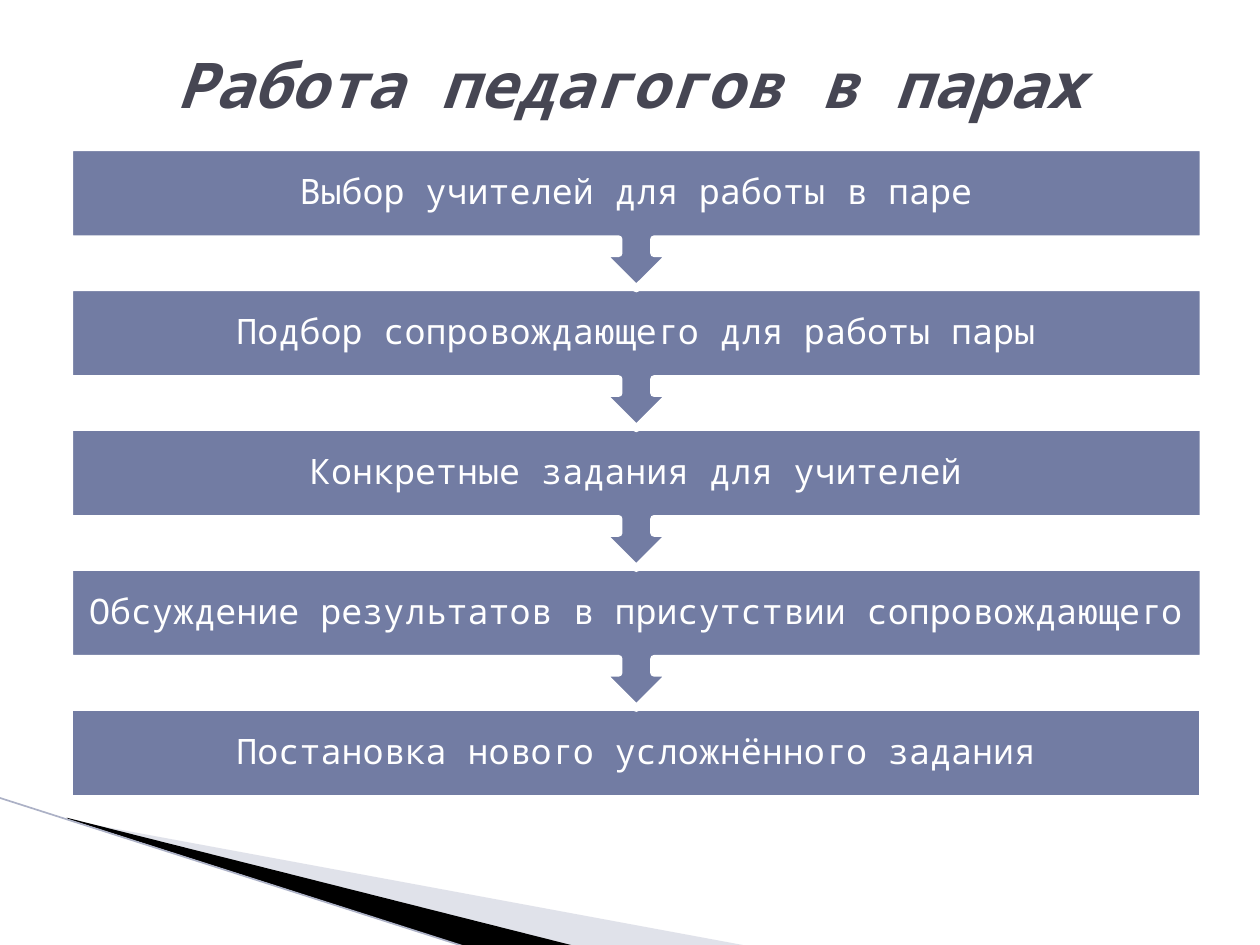
"""Build the slide on teachers working in pairs."""
from lxml import etree
from pptx import Presentation
from pptx import util as u
from pptx.dml.color import RGBColor
from pptx.enum import shapes, text
from pptx.oxml.ns import qn

PX = 9144
FONT = "Noto Sans Mono"
WHITE = RGBColor(0xFF, 0xFF, 0xFF)
BLACK = RGBColor(0, 0, 0)
SLATE = RGBColor(0x72, 0x7C, 0xA3)
PALE = RGBColor(0xB3, 0xB7, 0xCB)
EDGE = RGBColor(0xAC, 0xB1, 0xC6)
DARK = RGBColor(0x46, 0x46, 0x53)

LEFT, TOP, WIDTH = 55, 117, 900
STEP, BAR, CALL = 111, 73, 112
STEPS = [
    "Выбор учителей для работы в паре",
    "Подбор сопровождающего для работы пары",
    "Конкретные задания для учителей",
    "Обсуждение результатов в присутствии сопровождающего",
    "Постановка нового усложнённого задания",
]


def px(*nums):
    """Turn px lengths into EMU."""
    return [u.Emu(num * PX) for num in nums]


def add_wedge(slide, points, color, alpha=None):
    """Draw a filled outline, see-through if alpha is given."""
    pen = slide.shapes.build_freeform(*points[0], scale=PX)
    pen.add_line_segments(points[1:])
    wedge = pen.convert_to_shape()
    wedge.shadow.inherit = False
    wedge.fill.solid()
    wedge.fill.fore_color.rgb = color
    wedge.line.fill.background()
    if alpha:
        tone = wedge.fill._xPr.find(".//" + qn("a:srgbClr"))
        etree.SubElement(tone, qn("a:alpha"), val=str(alpha * 1000))


def add_edge(slide, ends):
    """Draw the thin line along the corner wedges."""
    edge = slide.shapes.add_connector(shapes.MSO_CONNECTOR.STRAIGHT, *px(*ends))
    edge.line.color.rgb = EDGE
    edge.line.width = u.Pt(0.95)
    etree.SubElement(edge._element.spPr, qn("a:effectLst"))


def add_bar(slide, top, last):
    """Draw a step's bar, with a down arrow unless it is the last."""
    kind = shapes.MSO_SHAPE.RECTANGLE if last else shapes.MSO_SHAPE.UP_ARROW_CALLOUT
    bar = slide.shapes.add_shape(kind, *px(LEFT, top, WIDTH, BAR if last else CALL))
    bar.rotation = 0 if last else 180
    bar.shadow.inherit = False
    bar.fill.solid()
    bar.fill.fore_color.rgb = SLATE
    bar.line.color.rgb = WHITE
    bar.line.width = u.Pt(4.33)


def set_text(frame, words, size, color):
    """Write one centred paragraph in a frame."""
    frame.word_wrap = True
    frame.vertical_anchor = text.MSO_ANCHOR.MIDDLE
    par = frame.paragraphs[0]
    par.text = words
    par.alignment = text.PP_ALIGN.CENTER
    par.font.name = FONT
    par.font.size = u.Pt(size)
    par.font.color.rgb = color
    return par


def add_label(slide, top, words):
    """Write a step's words over its bar."""
    frame = slide.shapes.add_textbox(*px(LEFT, top, WIDTH, BAR)).text_frame
    frame.margin_left = frame.margin_right = u.Emu(15 * PX)
    frame.margin_top = frame.margin_bottom = u.Emu(16 * PX)
    set_text(frame, words, 20, WHITE).line_spacing = 0.9


def set_title(slide, words):
    """Place and format the title."""
    title = slide.shapes.title
    title.left, title.top, title.width, title.height = px(50, 30, 900, 72)
    par = set_text(title.text_frame, words, 36, DARK)
    par.font.bold = par.font.italic = True


def main():
    """Build and save the slide."""
    deck = Presentation()
    deck.slide_width, deck.slide_height = px(1000, 750)
    slide = deck.slides.add_slide(deck.slide_layouts[5])
    set_title(slide, "Работа педагогов в парах")
    add_wedge(slide, [(55, 651), (595, 751), (456, 751), (55, 650)], PALE, 40)
    add_wedge(slide, [(53, 649), (457, 751), (372, 752), (54, 650)], BLACK)
    add_edge(slide, (-1, 633, 371, 752))
    for row, words in reversed(list(enumerate(STEPS))):
        top = TOP + row * STEP
        add_bar(slide, top, row == len(STEPS) - 1)
        add_label(slide, top, words)
    deck.save("out.pptx")


if __name__ == "__main__":
    main()
